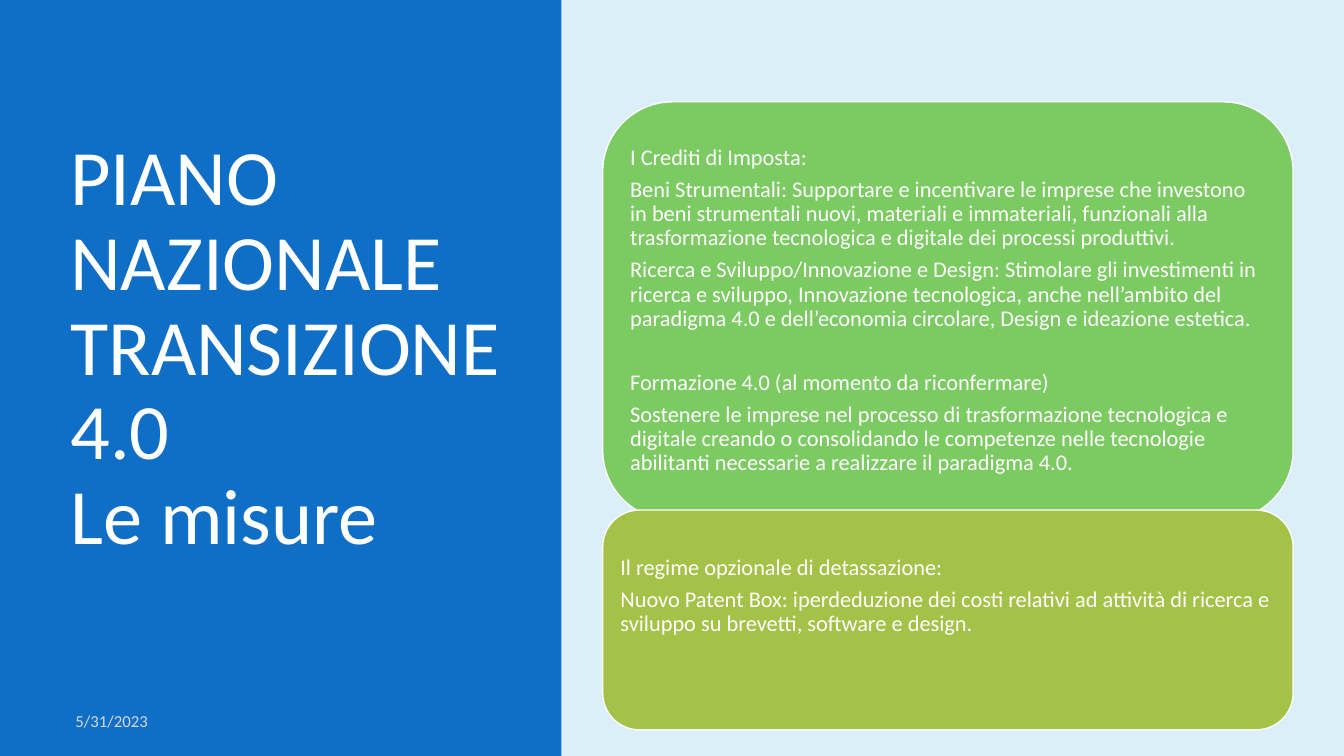
from pptx import Presentation
from pptx import util as u
from pptx.dml.color import RGBColor
from pptx.enum import shapes, text


def rgb(value):
    return RGBColor.from_string(value)


class Deck:
    """Holds the style and the current slide."""
    FONT, WHITE = "Calibri", "FFFFFF"

    def __init__(self, width, height, background):
        self.prs = Presentation()
        self.prs.slide_width, self.prs.slide_height = u.Pt(width), u.Pt(height)
        self.s = self.prs.slides.add_slide(self.prs.slide_layouts[6])
        fill = self.s.background.fill
        fill.solid()
        fill.fore_color.rgb = rgb(background)

    def shape(self, kind, box, fill, line=None):
        sp = self.s.shapes.add_shape(kind, *map(u.Pt, box))
        sp.shadow.inherit = False
        sp.fill.solid()
        sp.fill.fore_color.rgb = rgb(fill)
        if line:
            sp.line.color.rgb = rgb(line)
            sp.line.width = u.Pt(1)
        else:
            sp.line.fill.background()
        return sp

    def set_text(self, sp, paragraphs, size, color=WHITE, spacing=None,
                 insets=(7.2, 3.6, 7.2, 3.6)):
        """Fill a shape with (text, space before) paragraphs."""
        tf = sp.text_frame
        tf.word_wrap = True
        tf.vertical_anchor = text.MSO_ANCHOR.MIDDLE
        (tf.margin_left, tf.margin_top,
         tf.margin_right, tf.margin_bottom) = map(u.Pt, insets)
        for i, (words, before) in enumerate(paragraphs):
            p = tf.add_paragraph() if i else tf.paragraphs[0]
            p.text = words
            p.alignment = text.PP_ALIGN.LEFT
            p.space_before = u.Pt(before)
            if spacing:
                p.line_spacing = spacing
            p.font.name, p.font.size = self.FONT, u.Pt(size)
            p.font.color.rgb = rgb(color)

    def label(self, box, words, size, **style):
        sp = self.s.shapes.add_textbox(*map(u.Pt, box))
        self.set_text(sp, [(words, 0)], size, **style)

    def card(self, top, height, fill, paragraphs, bottom=5):
        box = (430.5, top, 493.2, height)
        sp = self.shape(shapes.MSO_SHAPE.ROUNDED_RECTANGLE, box, fill, self.WHITE)
        sp.adjustments[0] = 0.167
        self.set_text(sp, paragraphs, 16, spacing=0.9, insets=(5, 5, 5, bottom))


def main():
    deck = Deck(960, 540, "DBEFF9")

    # Left panel with title and date
    deck.shape(shapes.MSO_SHAPE.RECTANGLE, (0, 0, 401, 540), "0F6FC6")
    deck.label((43.2, 33.1, 327.6, 433.4),
               "PIANO NAZIONALE TRANSIZIONE 4.0\vLe misure", 56, spacing=0.9)
    deck.label((46.8, 500.4, 216, 28.8), "5/31/2023", 12, color="D8D8D8")

    # Tax credits
    gap, section_gap = 5.6, 28.6
    deck.card(72.7, 298.8, "7CCA62", [
        ("I Crediti di Imposta:", 0),
        ("Beni Strumentali: Supportare e incentivare le imprese che investono in "
         "beni strumentali nuovi, materiali e immateriali, funzionali alla "
         "trasformazione tecnologica e digitale dei processi produttivi.", gap),
        ("Ricerca e Sviluppo/Innovazione e Design: Stimolare gli investimenti in "
         "ricerca e sviluppo, Innovazione tecnologica, anche nell’ambito del "
         "paradigma 4.0 e dell’economia circolare, Design e ideazione estetica.", gap),
        ("Formazione 4.0 (al momento da riconfermare)", section_gap),
        ("Sostenere le imprese nel processo di trasformazione tecnologica e "
         "digitale creando o consolidando le competenze nelle tecnologie "
         "abilitanti necessarie a realizzare il paradigma 4.0.", gap),
    ])

    # Optional tax relief, text raised by a deeper bottom margin
    deck.card(364.3, 157, "A4C148", [
        ("Il regime opzionale di detassazione:", 0),
        ("Nuovo Patent Box: iperdeduzione dei costi relativi ad attività di "
         "ricerca e sviluppo su brevetti, software e design.", gap),
    ], bottom=39)

    deck.prs.save("out.pptx")


if __name__ == "__main__":
    main()
